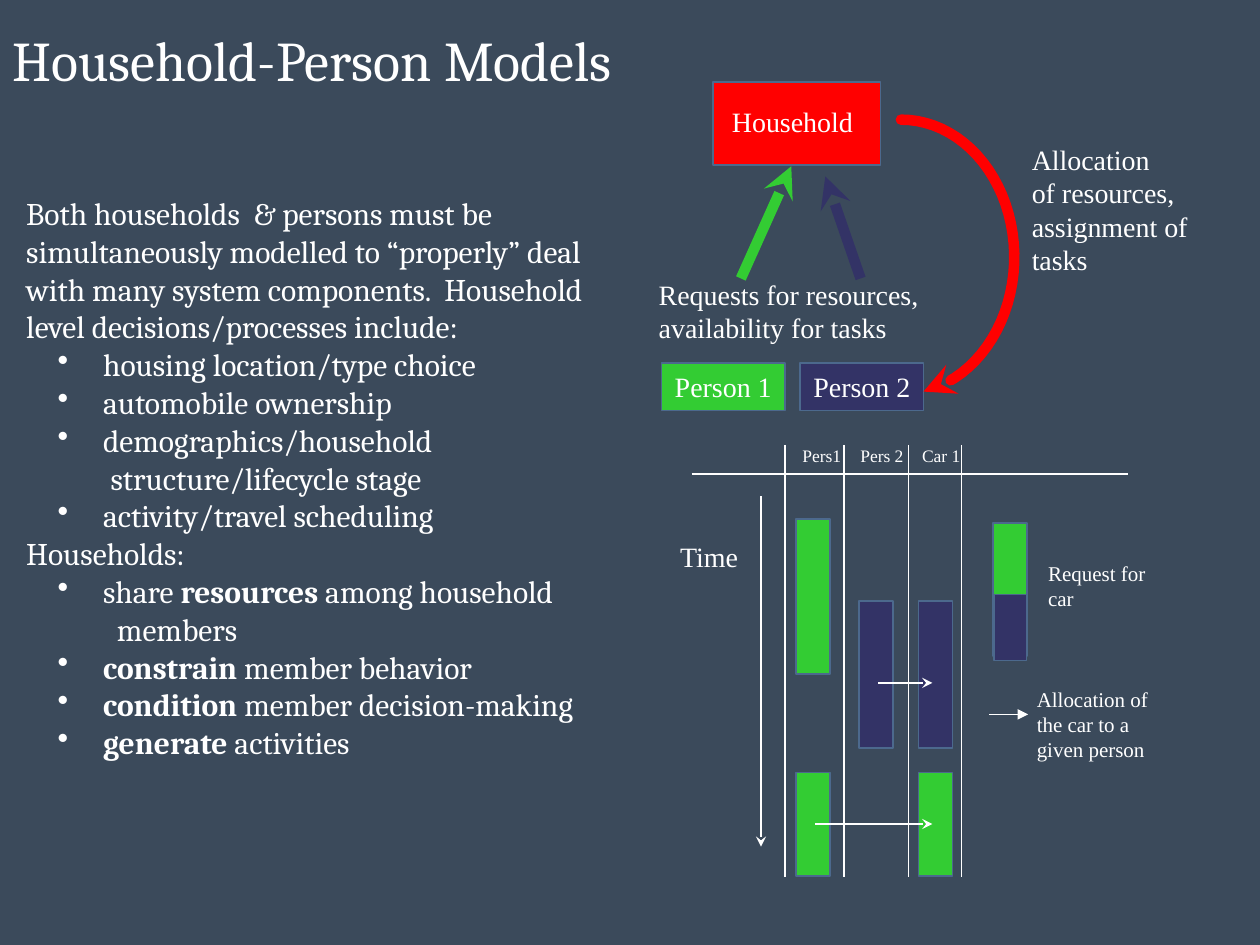
import math
from lxml import etree
from pptx import Presentation
from pptx import util as u
from pptx.dml.color import RGBColor
from pptx.enum import shapes, text
from pptx.oxml.ns import qn

COLORS = {"slate": "3B4A5B", "white": "FFFFFF", "household": "FF0000",
          "person1": "33CC33", "person2": "333366", "edge": "4C698D"}
SERIF, TIMES = "Cambria", "Times New Roman"
CELL = u.Inches(0.1)  # the slide is a grid of 100 columns by 75 rows
COLUMNS, ROWS = 100, 75


def grid(*cells):
    return [round(cell * CELL) for cell in cells]


def color(name):
    return RGBColor.from_string(COLORS[name])


def set_font(paragraph, size, face):
    paragraph.font.size = u.Pt(size)
    paragraph.font.name = face
    paragraph.font.color.rgb = color("white")


def add_block(slide, box, fill, edge_width=1):
    block = slide.shapes.add_shape(shapes.MSO_SHAPE.RECTANGLE, *grid(*box))
    block.shadow.inherit = False
    block.fill.solid()
    block.fill.fore_color.rgb = color(fill)
    if edge_width:
        block.line.color.rgb = color("edge")
        block.line.width = u.Pt(edge_width)
    else:
        block.line.fill.background()
    return block


def write_lines(frame, lines, size, align=text.PP_ALIGN.LEFT):
    frame.word_wrap = False
    for i, line in enumerate(lines):
        paragraph = frame.paragraphs[0] if i == 0 else frame.add_paragraph()
        paragraph.text = line
        paragraph.alignment = align
        set_font(paragraph, size, TIMES)


def add_label(slide, box, lines, size=16, align=text.PP_ALIGN.LEFT):
    label = slide.shapes.add_textbox(*grid(*box))
    write_lines(label.text_frame, lines, size, align)


def style_line(shape, hue, width, head=None, round_cap=False):
    shape.line.color.rgb = color(hue)
    shape.line.width = u.Pt(width)
    outline = shape.line._get_or_add_ln()
    if round_cap:
        outline.set("cap", "rnd")
    if head:
        etree.SubElement(outline, qn("a:tailEnd"), type=head)


def add_line(slide, start, end, hue="white", width=1, head=None):
    line = slide.shapes.add_connector(
        shapes.MSO_CONNECTOR.STRAIGHT, *grid(*start, *end))
    style_line(line, hue, width, head)
    etree.SubElement(line._element.spPr, qn("a:effectLst"))


def add_arc(slide, center, radii, first, last, hue, steps=40):
    angles = [math.radians(first + (last - first) * i / steps)
              for i in range(steps + 1)]
    points = [grid(center[0] + radii[0] * math.cos(a),
                   center[1] + radii[1] * math.sin(a)) for a in angles]
    builder = slide.shapes.build_freeform(*points[0])
    builder.add_line_segments(points[1:], close=False)
    arc = builder.convert_to_shape()
    arc.shadow.inherit = False
    arc.fill.background()
    style_line(arc, hue, 6, "stealth", round_cap=True)


def add_title(slide):
    frame = slide.shapes.add_textbox(*grid(0, 0.4, 65.2, 9.2)).text_frame
    frame.word_wrap = True
    frame.vertical_anchor = text.MSO_ANCHOR.MIDDLE
    title = frame.paragraphs[0]
    title.text = "Household-Person Models"
    title.line_spacing = 0.9
    set_font(title, 32, SERIF)


def add_body(slide):
    # Each entry: left margin in inches, bullet or not, (text, bold) runs
    def point(*runs):
        return 0.61, True, runs

    entries = [
        (0, False, [("Both households  & persons must be simultaneously modelled "
                     "to “properly” deal with many system components.  "
                     "Household level decisions/processes include:", False)]),
        point(("housing location/type choice", False)),
        point(("automobile ownership", False)),
        point(("demographics/household", False)),
        (0.67, False, [("structure/lifecycle stage", False)]),
        point(("activity/travel scheduling", False)),
        (0, False, [("Households:", False)]),
        point(("share ", False), ("resources", True), (" among household", False)),
        (0.72, False, [("members", False)]),
        point(("constrain", True), (" member behavior", False)),
        point(("condition", True), (" member decision-making", False)),
        point(("generate", True), (" activities", False)),
    ]
    frame = slide.shapes.add_textbox(*grid(1.1, 14.9, 50.8, 46.5)).text_frame
    frame.word_wrap = True
    for i, (margin, bulleted, runs) in enumerate(entries):
        paragraph = frame.paragraphs[0] if i == 0 else frame.add_paragraph()
        props = paragraph._p.get_or_add_pPr()
        props.set("marL", str(u.Inches(margin)))
        if bulleted:
            props.set("indent", str(u.Inches(0.25 - margin)))
            etree.SubElement(props, qn("a:buChar"), char="•")
        set_font(paragraph, 18, SERIF)
        for words, bold in runs:
            run = paragraph.add_run()
            run.text = words
            if bold:
                run.font.bold = True


def add_household_diagram(slide):
    center = text.PP_ALIGN.CENTER
    add_block(slide, (56.6, 6.5, 13.3, 6.6), "household")
    add_label(slide, (57.1, 7.8, 11.6, 3.7), ["Household"], align=center)
    for left, name, hue in ((52.5, "Person 1", "person1"),
                            (63.5, "Person 2", "person2")):
        person = add_block(slide, (left, 28.8, 9.8, 3.8), hue, 0.75)
        write_lines(person.text_frame, [name], 16, center)
    # Requests go up, allocations come down
    add_line(slide, (58.8, 22.1), (62.8, 13.2), "person1", 6, "stealth")
    add_line(slide, (68.3, 22.1), (65.5, 14), "person2", 6, "stealth")
    add_label(slide, (51.3, 21.5, 22.7, 6.4),
              ["Requests for resources,", "availability for tasks"])
    add_arc(slide, (71.5, 20.4), (9, 10.9), -90, 78.5, "household")
    add_label(slide, (80.9, 10.8, 14.5, 11.7),
              ["Allocation", "of resources,", "assignment of", "tasks"])


def add_schedule(slide):
    # Column rules and headings
    add_line(slide, (54.9, 37.6), (89.5, 37.6))
    for x in (62.3, 67, 72.1, 76.3):
        add_line(slide, (x, 35.3), (x, 69.6))
    for left, width, heading in ((62.7, 5.1, "Pers1"), (67.3, 5.5, "Pers 2"),
                                 (72.2, 5.1, "Car 1")):
        add_label(slide, (left, 34.8, width, 2.7), [heading], 10)

    # Periods of activity and car use
    pers1, pers2, car = 63.2, 68.2, 72.9
    for left, top, height, hue in (
            (pers1, 41.2, 12.3, "person1"), (pers1, 61.3, 8.2, "person1"),
            (pers2, 47.7, 11.7, "person2"), (car, 47.7, 11.7, "person2"),
            (car, 61.3, 8.2, "person1")):
        add_block(slide, (left, top, 2.7, height), hue)
    for x, y in ((69.7, 54.2), (64.7, 65.4)):
        add_line(slide, (x, y), (74, y), head="stealth")

    # Time axis
    add_line(slide, (60.4, 39.4), (60.4, 67.2), head="stealth")
    add_label(slide, (53, 42.3, 6.7, 3.7), ["Time"])


def add_legend(slide):
    add_block(slide, (78.8, 41.5, 2.7, 10.6), "person1")
    add_block(slide, (78.9, 47.2, 2.6, 5.2), "person2", 0.75)
    add_label(slide, (82.2, 44, 9.8, 5), ["Request for", "car"], 12)
    add_line(slide, (78.5, 56.7), (81.6, 56.7), head="triangle")
    add_label(slide, (81.3, 54, 10.9, 7),
              ["Allocation of", "the car to a", "given person"], 12)


def main():
    deck = Presentation()
    deck.slide_width, deck.slide_height = grid(COLUMNS, ROWS)
    slide = deck.slides.add_slide(deck.slide_layouts[6])
    add_block(slide, (0, 0, COLUMNS, ROWS), "slate", edge_width=0)
    add_title(slide)
    add_body(slide)
    add_household_diagram(slide)
    add_schedule(slide)
    add_legend(slide)
    deck.save("out.pptx")


if __name__ == "__main__":
    main()
